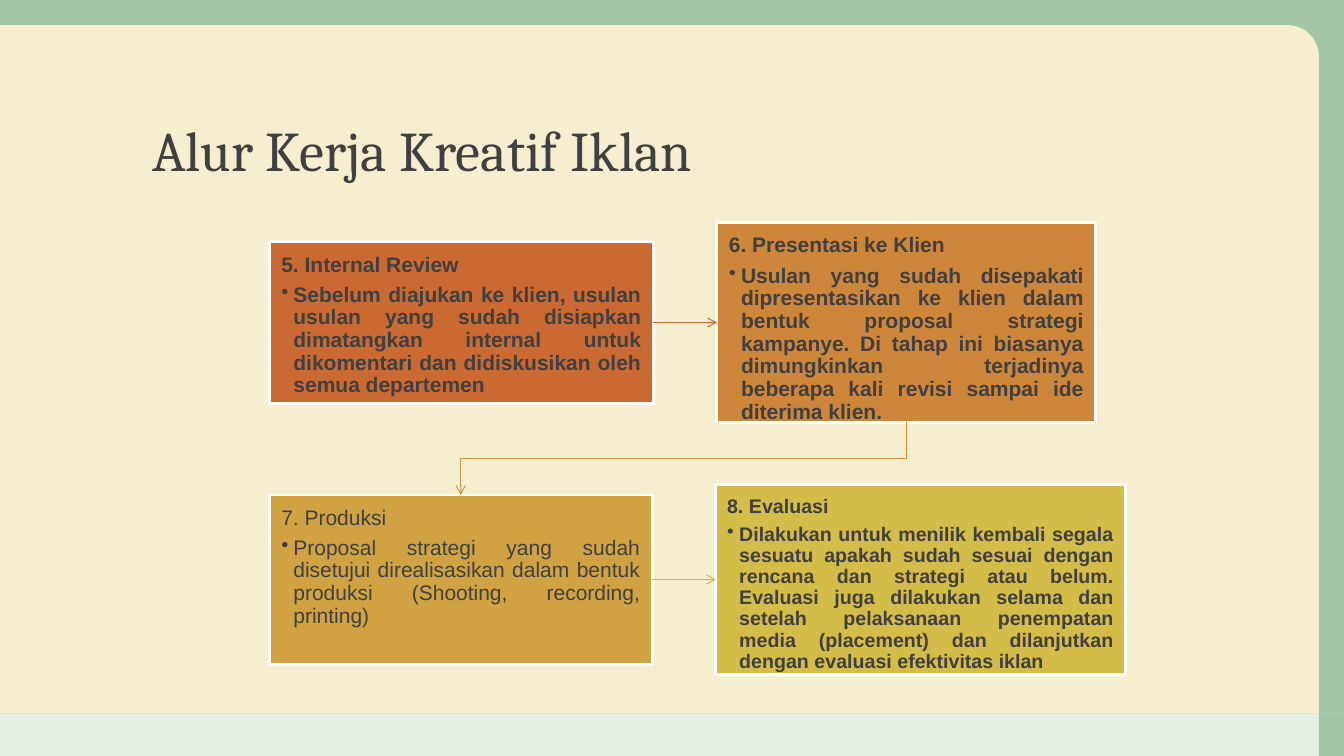
from lxml import etree
from pptx import Presentation
from pptx.dml.color import RGBColor
from pptx.enum.shapes import MSO_CONNECTOR, MSO_SHAPE
from pptx.enum.text import MSO_ANCHOR, PP_ALIGN
from pptx.oxml.ns import qn
from pptx.util import Inches, Pt

RECTANGLE = MSO_SHAPE.RECTANGLE
ROUNDED_CORNER = MSO_SHAPE.ROUND_1_RECTANGLE
STRAIGHT, ELBOW = MSO_CONNECTOR.STRAIGHT, MSO_CONNECTOR.ELBOW
TOP, BOTTOM = MSO_ANCHOR.TOP, MSO_ANCHOR.BOTTOM
LEFT, JUSTIFY = PP_ALIGN.LEFT, PP_ALIGN.JUSTIFY
TOP_SIDE, LEFT_SIDE, BOTTOM_SIDE, RIGHT_SIDE = range(4)

WHITE = RGBColor(0xFF, 0xFF, 0xFF)
INK = RGBColor(0x40, 0x40, 0x40)
MINT = RGBColor(0xD8, 0xEB, 0xD8)
GREEN = RGBColor(0x48, 0x8E, 0x4A)
CREAM = RGBColor(0xF5, 0xEE, 0xCF)
RUST = RGBColor(0xCB, 0x69, 0x33)
ORANGE = RGBColor(0xCE, 0x86, 0x3A)
AMBER = RGBColor(0xD0, 0x94, 0x3E)
OCHRE = RGBColor(0xD1, 0xA2, 0x41)
YELLOW = RGBColor(0xD4, 0xBC, 0x49)

STEPS = [
    ((2.67, 2.4, 3.81, 1.6), RUST, 15, True, "5. Internal Review",
     "Sebelum diajukan ke klien, usulan usulan yang sudah disiapkan dimatangkan internal "
     "untuk dikomentari dan didiskusikan oleh semua departemen"),
    ((7.11, 2.21, 3.76, 1.98), ORANGE, 15, True, "6. Presentasi ke Klien",
     "Usulan yang sudah disepakati dipresentasikan ke klien dalam bentuk proposal strategi "
     "kampanye. Di tahap ini biasanya dimungkinkan terjadinya beberapa kali revisi sampai "
     "ide diterima klien."),
    ((2.67, 4.91, 3.8, 1.68), OCHRE, 15, False, "7. Produksi",
     "Proposal strategi yang sudah disetujui direalisasikan dalam bentuk produksi "
     "(Shooting, recording, printing)"),
    ((7.1, 4.81, 4.06, 1.88), YELLOW, 14, True, "8. Evaluasi",
     "Dilakukan untuk menilik kembali segala sesuatu apakah sudah sesuai dengan rencana dan "
     "strategi atau belum. Evaluasi juga dilakukan selama dan setelah pelaksanaan penempatan "
     "media (placement) dan dilanjutkan dengan evaluasi efektivitas iklan"),
]


class WorkflowSlide:
    """Holds the style and the current slide of the advertising workflow."""

    heading_font = "Cambria"
    body_font = "Arial"
    indent = 0.12

    def __init__(self, page):
        self.page = page

    def block(self, place, color, kind=RECTANGLE, opacity=100):
        shape = self.page.shapes.add_shape(kind, *map(Inches, place))
        shape.shadow.inherit = False
        shape.fill.solid()
        shape.fill.fore_color.rgb = color
        shape.line.fill.background()
        if opacity < 100:
            tint = shape._element.spPr.find(qn("a:solidFill"))[0]
            etree.SubElement(tint, qn("a:alpha"), val=str(opacity * 1000))
        return shape

    def frame(self, shape, inset, anchor):
        margins = ("margin_left", "margin_top", "margin_right", "margin_bottom")
        values = dict.fromkeys(margins, Inches(inset))
        values.update(word_wrap=True, vertical_anchor=anchor)
        for name, value in values.items():
            setattr(shape.text_frame, name, value)
        return shape.text_frame

    def paragraph(self, para, text, align, after=0, bullet=False, **font):
        properties = para._p.get_or_add_pPr()
        if bullet:
            properties.set("marL", str(Inches(self.indent)))
            properties.set("indent", str(-Inches(self.indent)))
            etree.SubElement(properties, qn("a:buChar"), char="•")
        layout = {"alignment": align, "line_spacing": 0.9, "space_after": Pt(after)}
        for name, value in layout.items():
            setattr(para, name, value)
        span = para.add_run()
        span.text = text
        for name, value in font.items():
            setattr(span.font, name, value)
        span.font.color.rgb = INK

    def title(self, place, text):
        box = self.page.shapes.add_textbox(*map(Inches, place))
        frame = self.frame(box, 0.1, BOTTOM)
        self.paragraph(frame.paragraphs[0], text, LEFT, name=self.heading_font, size=Pt(40))

    def step(self, place, color, size, bold, heading, detail):
        box = self.block(place, color)
        box.line.color.rgb = WHITE
        box.line.width = Pt(2)
        frame = self.frame(box, size * 0.008, TOP)
        font = {"name": self.body_font, "size": Pt(size), "bold": bold}
        self.paragraph(frame.paragraphs[0], heading, JUSTIFY, after=size * 0.35, **font)
        self.paragraph(frame.add_paragraph(), detail, JUSTIFY, bullet=True, **font)
        return box

    def arrow(self, source, source_side, target, target_side, color, kind=STRAIGHT):
        link = self.page.shapes.add_connector(kind, 0, 0, 0, 0)
        link.begin_connect(source, source_side)
        link.end_connect(target, target_side)
        link.line.color.rgb = color
        link.line.width = Pt(0.75)
        properties = link._element.spPr
        etree.SubElement(properties.find(qn("a:ln")), qn("a:tailEnd"), type="arrow")
        etree.SubElement(properties, qn("a:effectLst"))
        if kind == ELBOW:
            self.turn_down(link)

    def turn_down(self, link):
        across, down = link.width, link.height
        shift = (across - down) // 2
        place = {"left": link.left + shift, "top": link.top - shift,
                 "width": down, "height": across}
        for name, value in place.items():
            setattr(link, name, value)
        transform = link._element.spPr.find(qn("a:xfrm"))
        transform.set("flipH", "0")
        transform.set("rot", "5400000")


def main():
    deck = Presentation()
    deck.slide_width, deck.slide_height = Inches(13.33), Inches(7.5)
    slide = WorkflowSlide(deck.slides.add_slide(deck.slide_layouts[6]))

    slide.block((0, 7.08, 13.08, 0.42), MINT, opacity=70)
    slide.block((13.08, 7.08, 0.25, 0.42), GREEN, opacity=50)
    slide.block((0, 0, 13.33, 7.08), GREEN, opacity=50)
    panel = slide.block((0, 0.25, 13.08, 6.83), CREAM, ROUNDED_CORNER)
    panel.adjustments[0] = 0.045
    slide.title((1.41, 0.62, 10.5, 1.3), "Alur Kerja Kreatif Iklan")

    review, pitch, production, evaluation = [slide.step(*step) for step in STEPS]
    slide.arrow(review, RIGHT_SIDE, pitch, LEFT_SIDE, RUST)
    slide.arrow(pitch, BOTTOM_SIDE, production, TOP_SIDE, AMBER, ELBOW)
    slide.arrow(production, RIGHT_SIDE, evaluation, LEFT_SIDE, YELLOW)
    deck.save("out.pptx")


if __name__ == "__main__":
    main()
